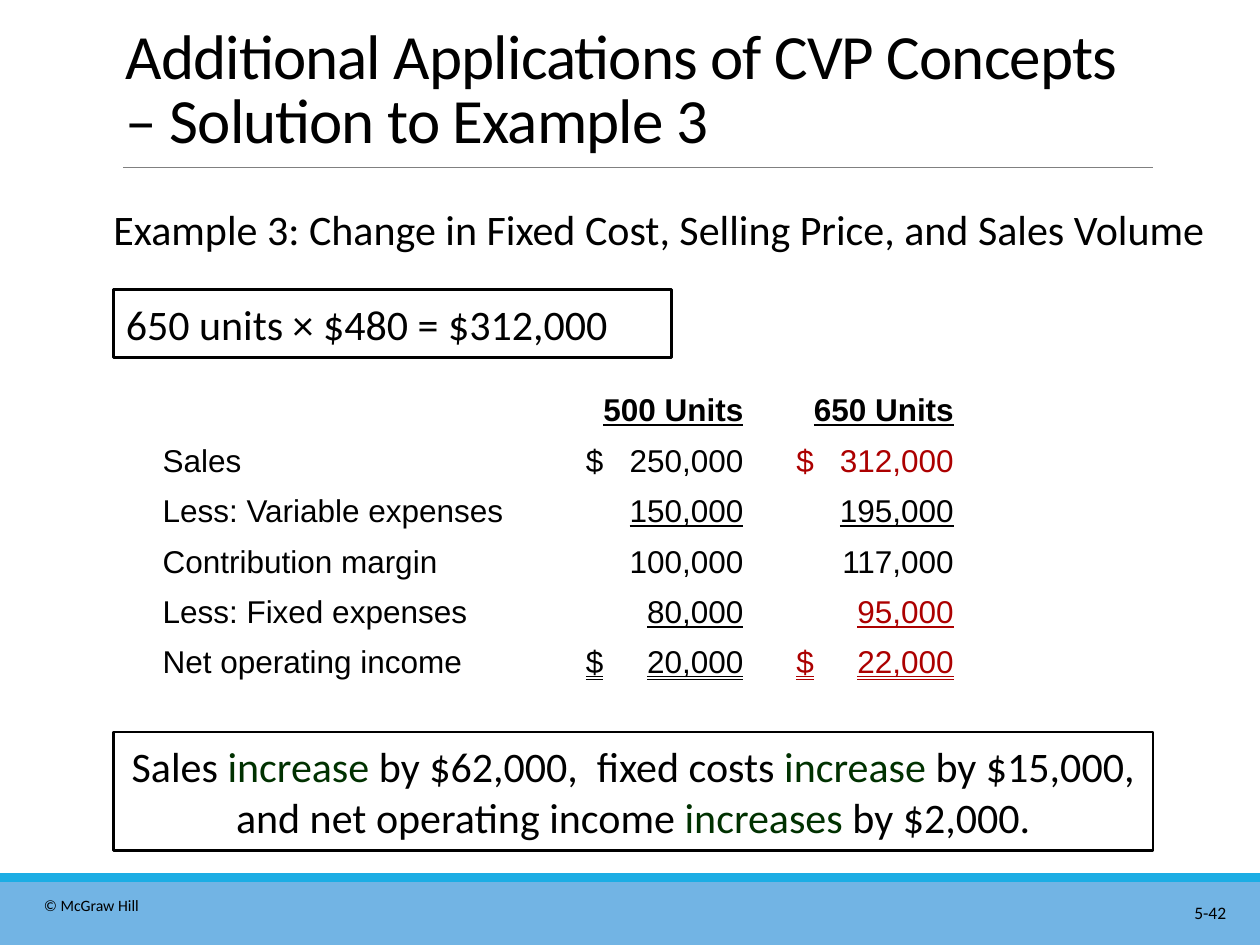
import dataclasses
import lxml.etree
import pptx
import pptx.dml.color
import pptx.enum.shapes
import pptx.enum.text
import pptx.oxml.ns
import pptx.util

ALIGN = pptx.enum.text.PP_ALIGN
ANCHOR = pptx.enum.text.MSO_ANCHOR
LINE = pptx.enum.text.MSO_UNDERLINE
RECT = pptx.enum.shapes.MSO_SHAPE.RECTANGLE
COLS, ROWS = 100, 75


@dataclasses.dataclass(frozen=True)
class Theme:
    """Colours, fonts and type sizes of the slide."""
    ink: str = "000000"
    red: str = "AC0000"
    green: str = "003100"
    band: str = "72B4E4"
    edge: str = "1CADE4"
    rule: str = "808080"
    font: str = "Calibri"
    data: str = "Arial"
    title: float = 36
    body: float = 24
    cell: float = 18
    page: float = 10
    note: float = 9


T = Theme()


def unit(n):
    """Turn grid steps, a tenth of an inch each, into a length."""
    return pptx.util.Inches(n / 10)


def place(box):
    """Turn a box of grid steps into lengths."""
    return [unit(n) for n in box]


def tint(code):
    """Make a colour from its hex code."""
    return pptx.dml.color.RGBColor.from_string(code)


def style(run, size, color=T.ink, face=T.font):
    """Set the face, size and colour of a run."""
    run.font.name = face
    run.font.size = pptx.util.Pt(size)
    run.font.color.rgb = tint(color)


def fill(frame, parts, size, align=ALIGN.LEFT, anchor=ANCHOR.TOP, side=1):
    """Write coloured parts as one paragraph in a frame."""
    frame.word_wrap = True
    frame.vertical_anchor = anchor
    frame.margin_left = frame.margin_right = unit(side)
    frame.margin_top = frame.margin_bottom = unit(0.5)
    para = frame.paragraphs[0]
    para.alignment = align
    for text, color in parts:
        run = para.add_run()
        run.text = text
        style(run, size, color)
    return para


def label(slide, box, text, size, **look):
    """Add a plain text box."""
    frame = slide.shapes.add_textbox(*place(box)).text_frame
    return fill(frame, [(text, T.ink)], size, **look)


def panel(slide, box, parts, **look):
    """Add a framed statement."""
    shape = slide.shapes.add_shape(RECT, *place(box))
    shape.shadow.inherit = False
    shape.fill.background()
    shape.line.color.rgb = tint(T.ink)
    shape.line.width = pptx.util.Pt(1.5)
    fill(shape.text_frame, parts, T.body, anchor=ANCHOR.MIDDLE, **look)


def header(slide, box):
    """Add the title with the rule below it."""
    left, top, width, height = box
    para = label(slide, box,
                 "Additional Applications of CVP Concepts – Solution to Example 3",
                 T.title, anchor=ANCHOR.BOTTOM)
    para.line_spacing = 0.85
    para.runs[0].font._element.set("spc", "-50")
    base = top + height + 0.4
    line = slide.shapes.add_connector(
        pptx.enum.shapes.MSO_CONNECTOR.STRAIGHT,
        *place((left + 0.8, base, left + width, base)))
    line.line.color.rgb = tint(T.rule)
    line.line.width = pptx.util.Pt(0.5)
    lxml.etree.SubElement(line._element.spPr, pptx.oxml.ns.qn("a:effectLst"))


def footer(slide, box):
    """Add the bottom band, the copyright line and the page number."""
    left, top, width, height = box
    edge = 0.7
    bars = [((left, top + edge, width, height - edge), T.band),
            ((left, top, width, edge), T.edge)]
    for area, color in bars:
        bar = slide.shapes.add_shape(RECT, *place(area))
        bar.shadow.inherit = False
        bar.fill.solid()
        bar.fill.fore_color.rgb = tint(color)
        bar.line.fill.background()
    label(slide, (left + 2.5, top + 1.3, 11.7, 2.5), "© McGraw Hill", T.note)
    label(slide, (left + width - 15, top + 1.8, 13.3, 2.7), "5-42", T.page,
          align=ALIGN.RIGHT)


def amount(cell, para, width, span):
    """Align a sum to a right tab, so that its underline spans the column."""
    cell.margin_left = unit(width - span - 1)
    props = para._p.get_or_add_pPr()
    tabs = lxml.etree.SubElement(props, pptx.oxml.ns.qn("a:tabLst"))
    lxml.etree.SubElement(tabs, pptx.oxml.ns.qn("a:tab"),
                          pos=str(unit(span)), algn="r")


def income(slide, box):
    """Add the table that compares the two income statements."""
    rows = [
        ("", "500 Units", "650 Units", None, T.ink),
        ("Sales", "$\t250,000", "$\t312,000", None, T.red),
        ("Less: Variable expenses", "\t150,000", "\t195,000", LINE.SINGLE_LINE, T.ink),
        ("Contribution margin", "\t100,000", "\t117,000", None, T.ink),
        ("Less: Fixed expenses", "\t80,000", "\t95,000", LINE.SINGLE_LINE, T.red),
        ("Net operating income", "$\t20,000", "$\t22,000", LINE.DOUBLE_LINE, T.red),
    ]
    widths = (32.3, 15.8, 16.7)
    table = slide.shapes.add_table(len(rows), len(widths), *place(box)).table
    table.first_row = table.horz_banding = False
    for col, width in zip(table.columns, widths):
        col.width = unit(width)
    for r, (*texts, under, last) in enumerate(rows):
        for c, text in enumerate(texts):
            cell = table.cell(r, c)
            cell.fill.background()
            para = cell.text_frame.paragraphs[0]
            para.text = text
            if "\t" in text:
                amount(cell, para, widths[c], 12.5)
            elif c:
                para.alignment = ALIGN.RIGHT
            para.font.size = pptx.util.Pt(T.cell)
            for run in para.runs:
                style(run, T.cell, last if c == 2 else T.ink, T.data)
                run.font.bold = r == 0
                if c:
                    run.font.underline = under if r else True


def main():
    """Build and save the slide."""
    deck = pptx.Presentation()
    deck.slide_width, deck.slide_height = unit(COLS), unit(ROWS)
    slide = deck.slides.add_slide(deck.slide_layouts[6])
    left, wide = 9, 82.5
    footer(slide, (0, 69.3, COLS, ROWS - 69.3))
    header(slide, (left, 1.7, wide, 11.2))
    label(slide, (left, 15.7, 86.8, 5.4),
          "Example 3: Change in Fixed Cost, Selling Price, and Sales Volume",
          T.body, side=0)
    panel(slide, (left, 23, 44.3, 5.4),
          [("650 units × $480 = $312,000", T.ink)])
    income(slide, (11.9, 30.7, 64.8, 23.4))
    panel(slide, (left, 58.1, wide, 9.4), [
        ("Sales ", T.ink), ("increase", T.green),
        (" by $62,000,  fixed costs ", T.ink), ("increase ", T.green),
        ("by $15,000, and net operating income ", T.ink),
        ("increases", T.green), (" by $2,000.", T.ink),
    ], align=ALIGN.CENTER, side=0)
    deck.save("out.pptx")


if __name__ == "__main__":
    main()
